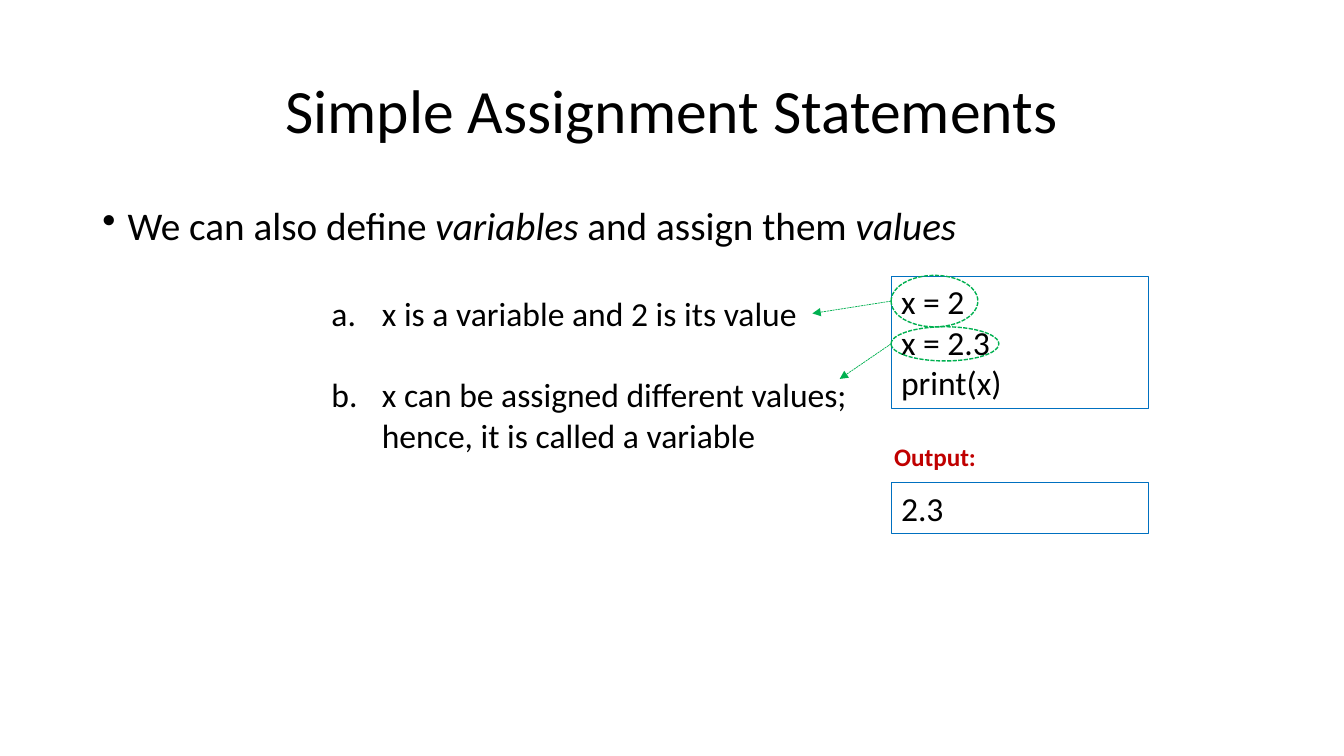
import dataclasses
from typing import Optional

import pptx
import pptx.dml.color
import pptx.enum.dml
import pptx.enum.shapes
import pptx.enum.text
import pptx.oxml.ns
import pptx.util
from lxml import etree

Pt = pptx.util.Pt
RGB = pptx.dml.color.RGBColor
SHAPE = pptx.enum.shapes.MSO_SHAPE
ANCHOR = pptx.enum.text.MSO_ANCHOR
ALIGN = pptx.enum.text.PP_ALIGN
DASH = pptx.enum.dml.MSO_LINE


@dataclasses.dataclass(frozen=True)
class Theme:
    font: str = "Calibri"
    ink: RGB = RGB(0, 0, 0)
    frame: RGB = RGB(0x00, 0x70, 0xC0)
    mark: RGB = RGB(0x00, 0xB0, 0x50)
    label: RGB = RGB(0xC0, 0x00, 0x00)
    title_size: float = 44
    body_size: float = 28
    code_size: float = 24
    label_size: float = 18


@dataclasses.dataclass(frozen=True)
class Box:
    left: float
    top: float
    width: float
    height: float

    def lengths(self) -> tuple:
        return tuple(Pt(v) for v in dataclasses.astuple(self))


@dataclasses.dataclass(frozen=True)
class CodeFrame:
    box: Box
    text: str


@dataclasses.dataclass(frozen=True)
class Callout:
    ring: Box
    tip_x: float
    tip_y: float


@dataclasses.dataclass(frozen=True)
class Note:
    text: str
    number: int
    space_before: float


THEME = Theme()
CODE_X, CODE_WIDTH = 636.5, 183.6
TITLE_BOX = Box(66, 28.8, 828, 104.4)
BODY_BOX = Box(66, 144, 851, 369.4)
NOTES_BOX = Box(229.7, 205.9, 392.4, 239.8)
LABEL_BOX = Box(631.5, 311.8, 73.4, 28.8)
BODY_RUNS = (("We can also define ", False), ("variables", True),
             (" and assign them ", False), ("values", True))
FRAMES = (
    CodeFrame(Box(CODE_X, 197.3, CODE_WIDTH, 94.3), "x = 2\nx = 2.3\nprint(x)"),
    CodeFrame(Box(CODE_X, 344.9, CODE_WIDTH, 36), "2.3"),
)
CALLOUTS = (
    Callout(Box(CODE_X, 196.7, 62, 36.8), 580.3, 223.9),
    Callout(Box(CODE_X, 233.4, 77, 24.4), 599.8, 270.7),
)
NOTES = (
    Note("x is a variable and 2 is its value", 1, 0),
    Note("x can be assigned different values;\nhence, it is called a variable", 2, 29),
)


def style_text(tf, size: float, color: RGB = THEME.ink, bold: bool = False) -> None:
    for p in tf.paragraphs:
        for r in p.runs:
            r.font.name = THEME.font
            r.font.size = Pt(size)
            r.font.bold = bold
            r.font.color.rgb = color


def set_bullet(p, indent: float, tag: str, **attributes: str) -> None:
    pPr = p._p.get_or_add_pPr()
    pPr.set("marL", str(Pt(indent)))
    pPr.set("indent", str(-Pt(indent)))
    etree.SubElement(pPr, pptx.oxml.ns.qn(tag), attributes)


def add_text_box(slide, box: Box, wrap: bool = True):
    tf = slide.shapes.add_textbox(*box.lengths()).text_frame
    tf.word_wrap = wrap
    return tf


def add_title(slide, text: str) -> None:
    sp = slide.shapes.title
    sp.left, sp.top, sp.width, sp.height = TITLE_BOX.lengths()
    tf = sp.text_frame
    tf.text = text
    tf.vertical_anchor = ANCHOR.MIDDLE
    tf.paragraphs[0].alignment = ALIGN.CENTER
    tf.paragraphs[0].line_spacing = 0.9
    style_text(tf, THEME.title_size)


def add_body(slide) -> None:
    tf = add_text_box(slide, BODY_BOX)
    p = tf.paragraphs[0]
    p.line_spacing = 0.9
    p.space_before = Pt(10)
    set_bullet(p, 18, "a:buChar", char="•")
    for text, italic in BODY_RUNS:
        r = p.add_run()
        r.text = text
        r.font.italic = italic
    style_text(tf, THEME.body_size)


def add_outline(slide, kind: SHAPE, box: Box, color: RGB, width: float,
                dash: Optional[DASH] = None):
    sp = slide.shapes.add_shape(kind, *box.lengths())
    sp.shadow.inherit = False
    sp.fill.background()
    sp.line.color.rgb = color
    sp.line.width = Pt(width)
    if dash is not None:
        sp.line.dash_style = dash
    return sp


def add_code_frame(slide, frame: CodeFrame) -> None:
    sp = add_outline(slide, SHAPE.RECTANGLE, frame.box, THEME.frame, 0.75)
    tf = sp.text_frame
    tf.text = frame.text
    tf.vertical_anchor = ANCHOR.TOP
    for p in tf.paragraphs:
        p.alignment = ALIGN.LEFT
    style_text(tf, THEME.code_size)


def add_callout(slide, callout: Callout) -> None:
    ring = callout.ring
    line = slide.shapes.add_connector(
        pptx.enum.shapes.MSO_CONNECTOR.STRAIGHT,
        Pt(ring.left), Pt(ring.top + ring.height / 2),
        Pt(callout.tip_x), Pt(callout.tip_y))
    line.line.color.rgb = THEME.mark
    line.line.width = Pt(0.5)
    line.line.dash_style = DASH.SQUARE_DOT
    qn = pptx.oxml.ns.qn
    etree.SubElement(line.line._get_or_add_ln(), qn("a:tailEnd"), {"type": "triangle"})
    etree.SubElement(line._element.spPr, qn("a:effectLst"))
    add_outline(slide, SHAPE.OVAL, ring, THEME.mark, 1, DASH.SQUARE_DOT)


def add_notes(slide) -> None:
    tf = add_text_box(slide, NOTES_BOX)
    for i, note in enumerate(NOTES):
        p = tf.add_paragraph() if i else tf.paragraphs[0]
        p.text = note.text
        p.space_before = Pt(note.space_before)
        set_bullet(p, 36, "a:buAutoNum", type="alphaLcPeriod", startAt=str(note.number))
    style_text(tf, THEME.code_size)


def add_output_label(slide) -> None:
    tf = add_text_box(slide, LABEL_BOX, wrap=False)
    tf.text = "Output:"
    style_text(tf, THEME.label_size, THEME.label, bold=True)


def main() -> None:
    prs = pptx.Presentation()
    prs.slide_width, prs.slide_height = Pt(960), Pt(540)
    slide = prs.slides.add_slide(prs.slide_layouts[5])
    add_title(slide, "Simple Assignment Statements")
    add_body(slide)
    for frame in FRAMES:
        add_code_frame(slide, frame)
    for callout in CALLOUTS:
        add_callout(slide, callout)
    add_notes(slide)
    add_output_label(slide)
    prs.save("out.pptx")


if __name__ == "__main__":
    main()
